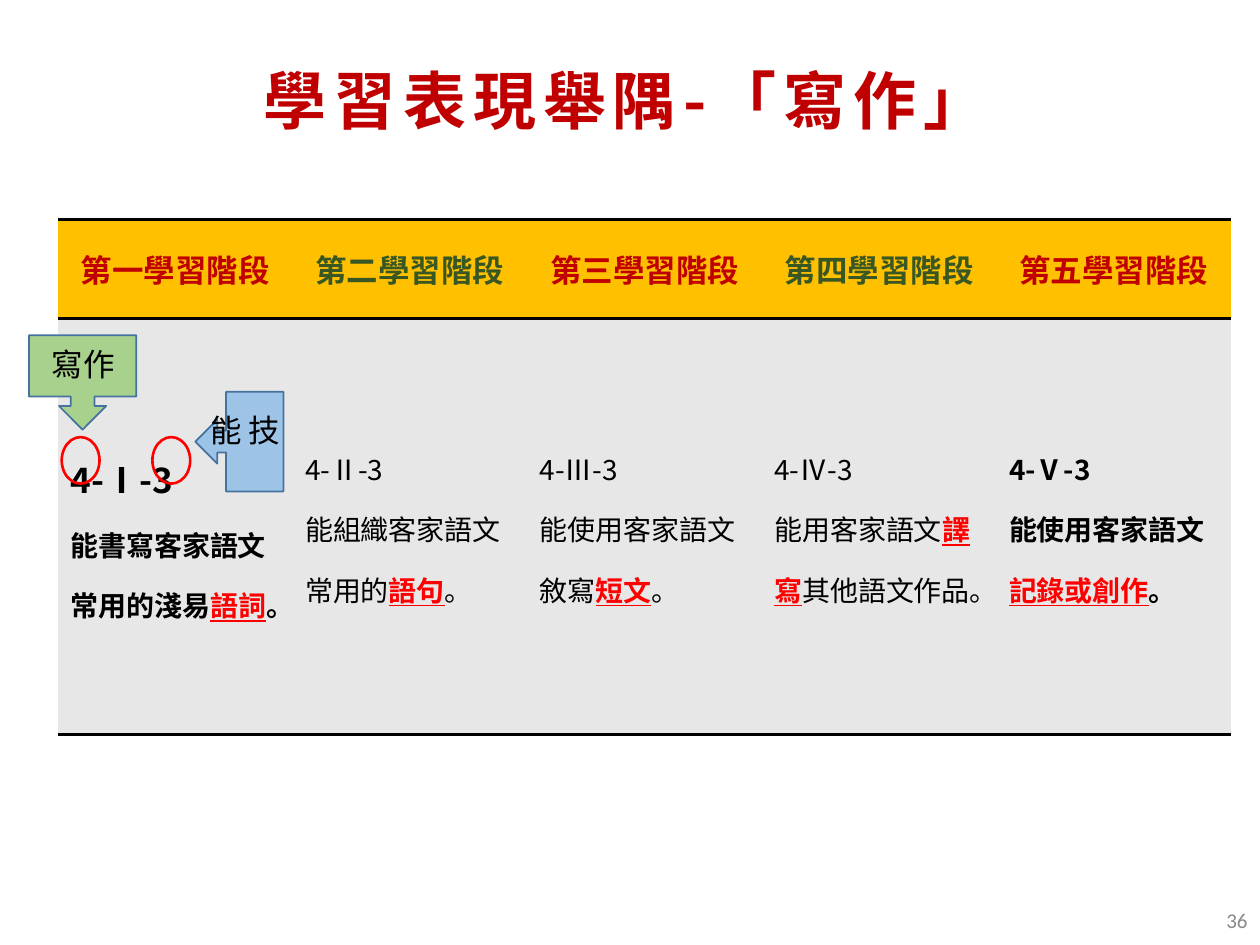
from dataclasses import dataclass
from typing import NamedTuple

from lxml import etree
from pptx import Presentation
from pptx.dml.color import RGBColor
from pptx.enum.shapes import MSO_SHAPE
from pptx.enum.text import MSO_ANCHOR, PP_ALIGN
from pptx.oxml.ns import qn
from pptx.util import Pt

ELLIPSE = MSO_SHAPE.OVAL
DOWN_CALLOUT = MSO_SHAPE.DOWN_ARROW_CALLOUT
LEFT_CALLOUT = MSO_SHAPE.LEFT_ARROW_CALLOUT
MIDDLE, TOP = MSO_ANCHOR.MIDDLE, MSO_ANCHOR.TOP
LEFT, CENTER, RIGHT = PP_ALIGN.LEFT, PP_ALIGN.CENTER, PP_ALIGN.RIGHT
NO_TABLE_STYLE = "{2D5ABB26-0587-4C30-8999-92F81FD0307C}"


@dataclass(frozen=True)
class Theme:
    cjk: str = "Noto Sans CJK SC"
    latin: str = "Calibri"
    title_size: float = 36
    label_size: float = 18
    code_size: float = 20
    body_size: float = 16
    page_size: float = 12
    black: str = "000000"
    dark_red: str = "C00000"
    dark_green: str = "385723"
    red: str = "FF0000"
    grey: str = "898989"
    header_fill: str = "FFC000"
    body_fill: str = "E7E7E7"
    green_fill: str = "A9D18E"
    blue_fill: str = "9DC3E6"
    callout_line: str = "43739E"


THEME = Theme()


class Frame(NamedTuple):
    left: float
    top: float
    width: float
    height: float

    def lengths(self) -> list:
        return [Pt(value) for value in self]


class Stage(NamedTuple):
    name: str
    code: str
    before: str
    keyword: str
    after: str
    bold: bool = False
    code_size: float = THEME.body_size


class Mark(NamedTuple):
    kind: int
    frame: Frame
    line: str
    weight: float
    fill: str | None = None


class Label(NamedTuple):
    text: str
    frame: Frame
    size: float
    color: str
    align: int = LEFT
    anchor: int = TOP
    font: str = THEME.cjk
    bold: bool = False
    spacing: float = 0
    vertical: bool = False


STAGES = [
    Stage("第一學習階段", "4-Ⅰ-3", "能書寫客家語文常用的淺易", "語詞", "。", True, THEME.code_size),
    Stage("第二學習階段", "4-Ⅱ-3", "能組織客家語文常用的", "語句", "。"),
    Stage("第三學習階段", "4-Ⅲ-3", "能使用客家語文敘寫", "短文", "。"),
    Stage("第四學習階段", "4-Ⅳ-3", "能用客家語文", "譯寫", "其他語文作品。"),
    Stage("第五學習階段", "4-Ⅴ-3", "能使用客家語文", "記錄或創作", "。", True),
]
TABLE = Frame(33.1, 125.3, 670.5, 294.5)
HEADER_HEIGHT = 56.9
BODY_TOP_MARGIN = 62.2

MARKS = [
    Mark(ELLIPSE, Frame(35.3, 249.8, 21.6, 26.6), THEME.red, 1.5),
    Mark(ELLIPSE, Frame(87.1, 249.8, 21.6, 26.6), THEME.red, 1.5),
    Mark(DOWN_CALLOUT, Frame(16.6, 191.5, 61.2, 54), THEME.callout_line, 1, THEME.green_fill),
    Mark(LEFT_CALLOUT, Frame(111.6, 223.9, 50.4, 56.9), THEME.callout_line, 1, THEME.blue_fill),
]
LABELS = [
    Label("學習表現舉隅-「寫作」", Frame(46.8, 0, 620.6, 113), THEME.title_size, THEME.dark_red,
          CENTER, MIDDLE, bold=True, spacing=4),
    Label("36", Frame(558, 511.2, 162, 28.8), THEME.page_size, THEME.grey,
          RIGHT, MIDDLE, THEME.latin),
    Label("寫作", Frame(15.8, 193.7, 63.4, 28.8), THEME.label_size, THEME.black, CENTER),
    Label("技能", Frame(128.9, 229.7, 36, 46.8), THEME.label_size, THEME.black, vertical=True),
]


def rgb(color: str) -> RGBColor:
    return RGBColor.from_string(color)


def style_paragraph(para, size: float, color: str, bold: bool = False,
                    name: str = THEME.cjk, spacing: float = 0) -> None:
    font = para.font
    font.size, font.bold, font.name = Pt(size), bold, name
    font.color.rgb = rgb(color)
    properties = font._element
    etree.SubElement(properties, qn("a:ea"), typeface=name)
    if spacing:
        properties.set("spc", str(int(spacing * 100)))


def style_cell(cell, fill: str, edges: str) -> None:
    """Fill a cell and rule the edges named by the letters T and B."""
    properties = cell._tc.get_or_add_tcPr()
    for edge in edges:
        line = etree.SubElement(properties, qn(f"a:ln{edge}"), w=str(Pt(2)))
        solid = etree.SubElement(line, qn("a:solidFill"))
        etree.SubElement(solid, qn("a:srgbClr"), val=THEME.black)
    cell.fill.solid()
    cell.fill.fore_color.rgb = rgb(fill)


def fill_header(cell, name: str, color: str) -> None:
    style_cell(cell, THEME.header_fill, "TB")
    cell.vertical_anchor = MIDDLE
    para = cell.text_frame.paragraphs[0]
    para.text, para.alignment = name, CENTER
    style_paragraph(para, THEME.label_size, color, True)


def fill_body(cell, stage: Stage) -> None:
    style_cell(cell, THEME.body_fill, "TB")
    cell.margin_top = Pt(BODY_TOP_MARGIN)
    code = cell.text_frame.paragraphs[0]
    code.text = stage.code
    sentence = cell.text_frame.add_paragraph()
    for para, size in ((code, stage.code_size), (sentence, THEME.body_size)):
        para.line_spacing = 1.5
        style_paragraph(para, size, THEME.black, stage.bold)
    for text in (stage.before, stage.keyword, stage.after):
        span = sentence.add_run()
        span.text = text
        if text == stage.keyword:
            span.font.bold = span.font.underline = True
            span.font.color.rgb = rgb(THEME.red)


def add_stage_table(page) -> None:
    table = page.shapes.add_table(2, len(STAGES), *TABLE.lengths()).table
    table.first_row = table.horz_banding = False
    table._tbl.tblPr.find(qn("a:tableStyleId")).text = NO_TABLE_STYLE
    table.rows[0].height = Pt(HEADER_HEIGHT)
    table.rows[1].height = Pt(TABLE.height - HEADER_HEIGHT)
    for column, stage in enumerate(STAGES):
        color = THEME.dark_green if column % 2 else THEME.dark_red
        fill_header(table.cell(0, column), stage.name, color)
        fill_body(table.cell(1, column), stage)


def add_mark(page, mark: Mark) -> None:
    shape = page.shapes.add_shape(mark.kind, *mark.frame.lengths())
    shape.shadow.inherit = False
    shape.line.color.rgb = rgb(mark.line)
    shape.line.width = Pt(mark.weight)
    if mark.fill:
        shape.fill.solid()
        shape.fill.fore_color.rgb = rgb(mark.fill)
    else:
        shape.fill.background()


def add_label(page, label: Label) -> None:
    frame = page.shapes.add_textbox(*label.frame.lengths()).text_frame
    frame.word_wrap = True
    frame.vertical_anchor = label.anchor
    if label.vertical:
        frame._txBody.bodyPr.set("vert", "eaVert")
    para = frame.paragraphs[0]
    para.text, para.alignment = label.text, label.align
    style_paragraph(para, label.size, label.color, label.bold, label.font, label.spacing)


def main() -> None:
    deck = Presentation()
    deck.slide_width, deck.slide_height = Pt(720), Pt(540)
    page = deck.slides.add_slide(deck.slide_layouts[6])
    add_stage_table(page)
    for mark in MARKS:
        add_mark(page, mark)
    for label in LABELS:
        add_label(page, label)
    deck.save("out.pptx")


if __name__ == "__main__":
    main()
